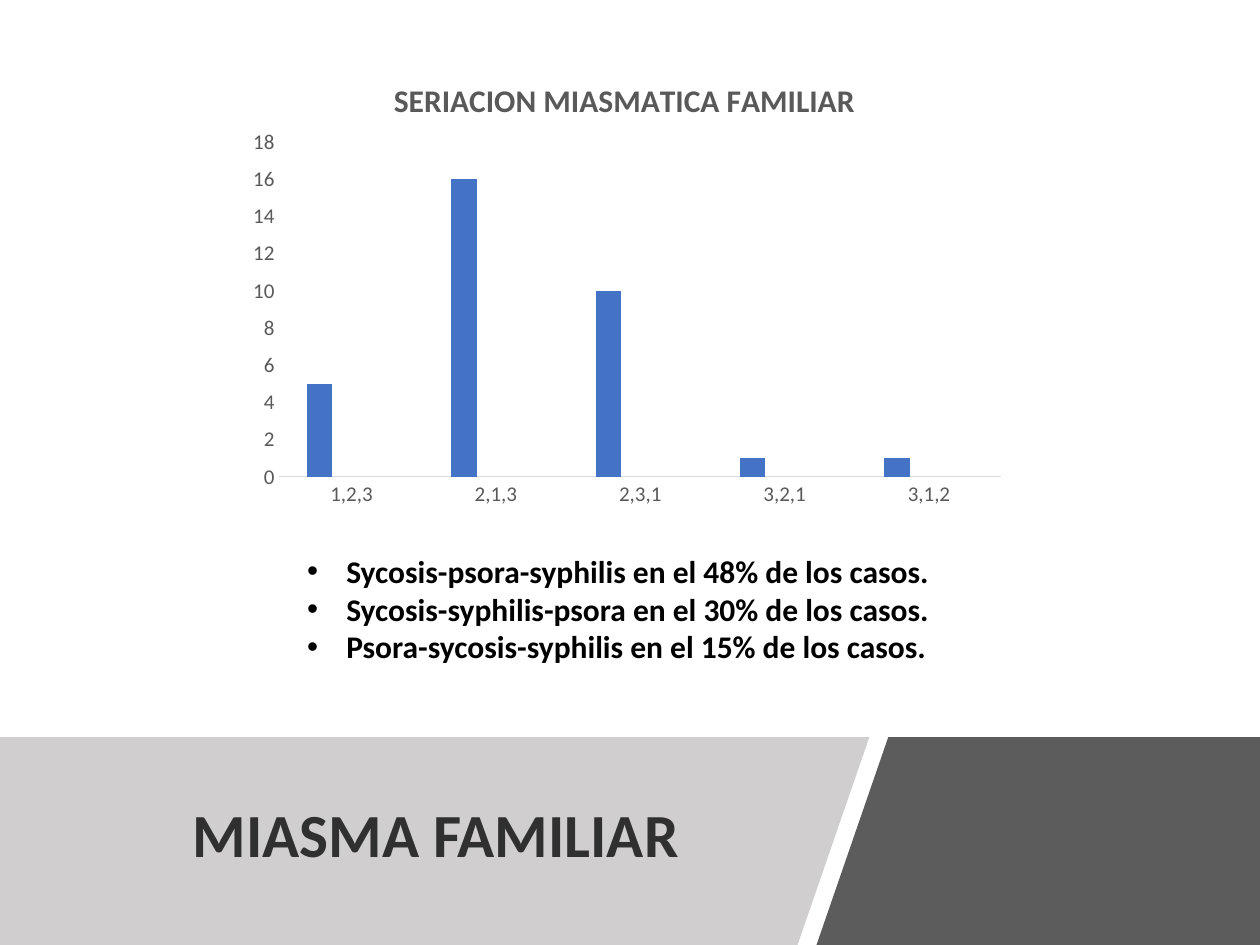
from dataclasses import dataclass

from lxml.etree import SubElement
from pptx import Presentation
from pptx.chart.data import CategoryChartData
from pptx.dml.color import RGBColor
from pptx.enum.chart import XL_CHART_TYPE, XL_TICK_MARK
from pptx.enum.text import MSO_ANCHOR, PP_ALIGN
from pptx.oxml.ns import qn
from pptx.util import Inches, Pt

COLORS = {
    "light_band": "D0CECE", "dark_band": "404040", "heading": "303030",
    "text": "000000", "chart_text": "595959", "axis_line": "D9D9D9",
}
FONT = "Calibri"
BAND_TOP, BAND_BOTTOM = 5.85, 7.5


@dataclass
class Band:
    corners: list[tuple[float, float]]
    color: str
    opacity: int = 100


@dataclass
class Series:
    name: str
    values: list
    color: str


BANDS = [
    Band([(0, BAND_TOP), (6.9, BAND_TOP), (6.33, BAND_BOTTOM), (0, BAND_BOTTOM)],
         "light_band"),
    Band([(7.05, BAND_TOP), (10, BAND_TOP), (10, BAND_BOTTOM), (6.48, BAND_BOTTOM)],
         "dark_band", 85),
]
CATEGORIES = ["1,2,3", "2,1,3", "2,3,1", "3,2,1", "3,1,2"]
SERIES = [
    Series("Series 1", [5, 16, 10, 1, 1], "4472C4"),
    Series("Series 2", [None] * 5, "ED7D31"),
    Series("Series 3", [None] * 5, "A5A5A5"),
]
FINDINGS = [
    "Sycosis-psora-syphilis en el 48% de los casos.",
    "Sycosis-syphilis-psora en el 30% de los casos.",
    "Psora-sycosis-syphilis en el 15% de los casos.",
]


def rgb(name: str) -> RGBColor:
    return RGBColor.from_string(COLORS[name])


def style_font(font, size: float, color: str, bold: bool = False) -> None:
    settings = {"name": FONT, "size": Pt(size), "bold": bold}
    for attribute, value in settings.items():
        setattr(font, attribute, value)
    font.color.rgb = rgb(color)


def draw_band(slide, band: Band) -> None:
    points = [(Inches(x), Inches(y)) for x, y in band.corners]
    builder = slide.shapes.build_freeform(*points[0])
    builder.add_line_segments(points[1:], close=True)
    shape = builder.convert_to_shape()
    shape.shadow.inherit = False
    shape.line.fill.background()
    shape.fill.solid()
    shape.fill.fore_color.rgb = rgb(band.color)
    if band.opacity < 100:
        fill_color = shape.fill._xPr.find(qn("a:solidFill"))[0]
        SubElement(fill_color, qn("a:alpha")).set("val", str(band.opacity * 1000))


def add_text(slide, box: tuple, lines: list[str], size: float, color: str,
             wrap: bool):
    frame = slide.shapes.add_textbox(*map(Inches, box)).text_frame
    frame.word_wrap = wrap
    for number, line in enumerate(lines):
        paragraph = frame.paragraphs[0] if number == 0 else frame.add_paragraph()
        run = paragraph.add_run()
        run.text = line
        style_font(run.font, size, color, bold=True)
    return frame


def add_bullet(paragraph, indent: float) -> None:
    properties = paragraph._p.get_or_add_pPr()
    properties.set("marL", str(Inches(indent)))
    properties.set("indent", str(-Inches(indent)))
    SubElement(properties, qn("a:buFont")).set("typeface", "Arial")
    SubElement(properties, qn("a:buChar")).set("char", "•")


def place(element, **settings) -> None:
    """Give a chart part a fixed place, in fractions of the chart."""
    layout = element.find(qn("c:layout"))
    if layout is None:
        layout = SubElement(element, qn("c:layout"))
        element.insert(0, layout)
    manual = SubElement(layout, qn("c:manualLayout"))
    for tag, value in settings.items():
        SubElement(manual, qn(f"c:{tag}")).set("val", str(value))


def add_family_chart(slide) -> None:
    data = CategoryChartData()
    data.categories = CATEGORIES
    for series in SERIES:
        data.add_series(series.name, series.values)
    chart = slide.shapes.add_chart(
        XL_CHART_TYPE.COLUMN_CLUSTERED,
        *map(Inches, (1.91, 0.39, 6.16, 3.69)), data).chart
    chart.has_legend = False
    style_font(chart.font, 10, "text")

    # Title
    heading = chart.chart_title.text_frame.paragraphs[0].add_run()
    heading.text = "SERIACION MIASMATICA FAMILIAR"
    style_font(heading.font, 18, "chart_text", bold=True)
    chart.chart_title.include_in_layout = False

    # Columns
    plot = chart.plots[0]
    for attribute, value in {"gap_width": 219, "overlap": -27,
                             "vary_by_categories": False}.items():
        setattr(plot, attribute, value)
    for column, series in zip(plot.series, SERIES):
        column.format.fill.solid()
        column.format.fill.fore_color.rgb = RGBColor.from_string(series.color)

    # Axes
    for axis in (chart.category_axis, chart.value_axis):
        for attribute, value in {"major_tick_mark": XL_TICK_MARK.NONE,
                                 "minor_tick_mark": XL_TICK_MARK.NONE,
                                 "has_major_gridlines": False}.items():
            setattr(axis, attribute, value)
        style_font(axis.tick_labels.font, 12, "chart_text")
    chart.category_axis.format.line.color.rgb = rgb("axis_line")
    chart.category_axis.format.line.width = Pt(0.75)
    chart.value_axis.format.line.fill.background()
    for attribute, value in {"minimum_scale": 0, "maximum_scale": 18,
                             "major_unit": 2}.items():
        setattr(chart.value_axis, attribute, value)

    place(chart.chart_title._element, xMode="edge", yMode="edge", x=0.19, y=0.05)
    place(chart._chartSpace.chart.plotArea, layoutTarget="inner", xMode="edge",
          yMode="edge", x=0.05, y=0.2, w=0.93, h=0.72)


def main() -> None:
    presentation = Presentation()
    presentation.slide_width, presentation.slide_height = Inches(10), Inches(7.5)
    slide = presentation.slides.add_slide(presentation.slide_layouts[6])

    # Bottom bands with the slide heading
    light_band, dark_band = BANDS
    draw_band(slide, light_band)
    heading = add_text(slide, (0.69, 6.05, 5.54, 1.2), ["MIASMA FAMILIAR"],
                       35, "heading", wrap=True)
    heading.vertical_anchor = MSO_ANCHOR.MIDDLE
    heading.paragraphs[0].alignment = PP_ALIGN.CENTER
    heading.paragraphs[0].line_spacing = 0.9
    draw_band(slide, dark_band)

    # Findings
    findings = add_text(slide, (2.34, 4.33, 5.17, 1.01), FINDINGS, 18, "text",
                        wrap=False)
    for paragraph in findings.paragraphs:
        add_bullet(paragraph, 0.31)

    add_family_chart(slide)
    presentation.save("out.pptx")


if __name__ == "__main__":
    main()
